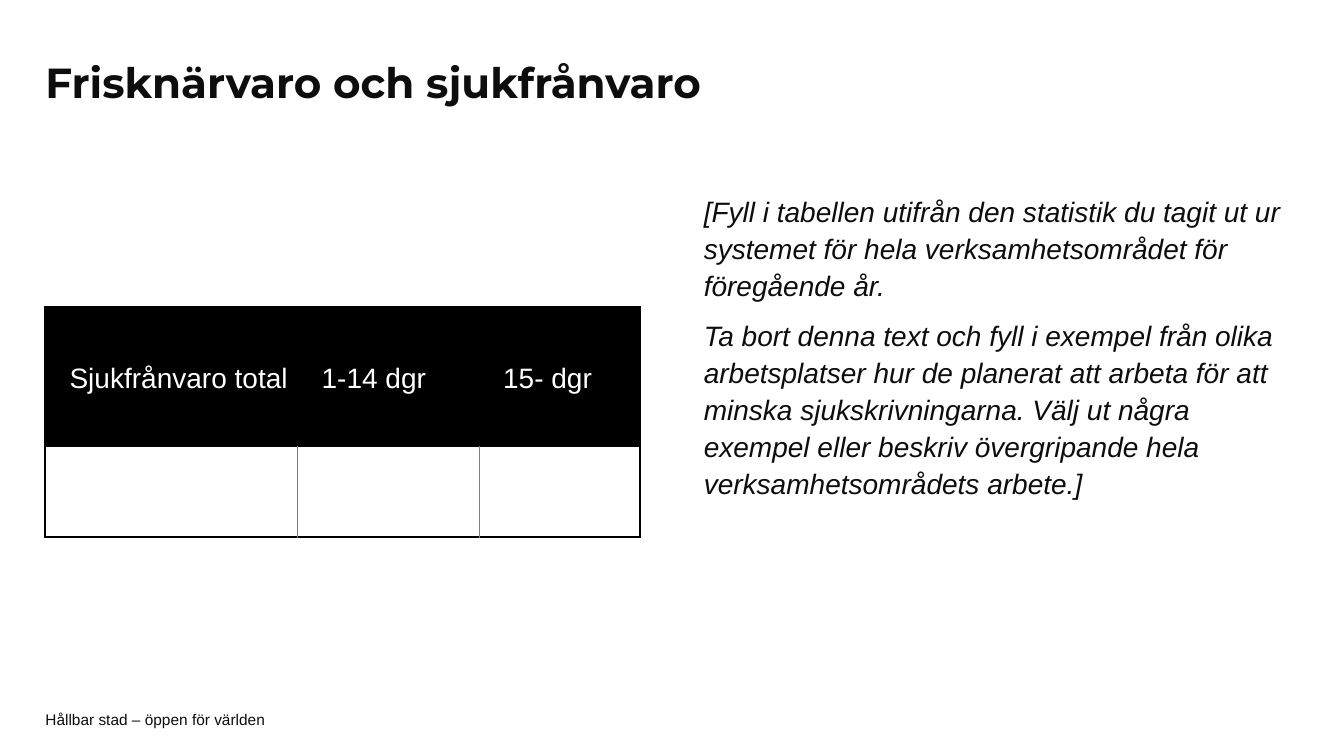
from pptx import Presentation
from pptx.dml.color import RGBColor
from pptx.enum.text import MSO_ANCHOR
from pptx.oxml.ns import qn
from pptx.util import Inches, Pt
from lxml import etree

MIDDLE, TOP = MSO_ANCHOR.MIDDLE, MSO_ANCHOR.TOP

# Content
COLORS = {"ink": "0D0D0D", "black": "000000", "white": "FFFFFF", "grid": "808080"}
TITLE = "Frisknärvaro och sjukfrånvaro"
FOOTER = "Hållbar stad – öppen för världen"
BODY = [
    "[Fyll i tabellen utifrån den statistik du tagit ut ur systemet för hela "
    "verksamhetsområdet för föregående år.",
    "Ta bort denna text och fyll i exempel från olika arbetsplatser hur de "
    "planerat att arbeta för att minska sjukskrivningarna. Välj ut några exempel "
    "eller beskriv övergripande hela verksamhetsområdets arbete.]",
]
ROWS = [["Sjukfrånvaro total", "1-14 dgr", "15- dgr"], ["", "", ""]]
WIDTHS = [2.5, 1.8, 1.6]
HEIGHTS = [1.39, 0.9]
LEFT = 0.45


def color(name):
    return RGBColor.from_string(COLORS[name])


def style(para, size, face="Arial", tint="ink", bold=False, italic=False):
    font = para.font
    font.size, font.name, font.bold, font.italic = Pt(size), face, bold, italic
    font.color.rgb = color(tint)


def add_text(slide, box, lines, anchor, pad=0, **look):
    frame = slide.shapes.add_textbox(*map(Inches, box)).text_frame
    frame.word_wrap = True
    frame.vertical_anchor = anchor
    frame.margin_left = frame.margin_right = 0
    frame.margin_top = frame.margin_bottom = Inches(pad)
    frame.text = "\n".join(lines)
    for para in frame.paragraphs:
        style(para, **look)
    return frame.paragraphs


def add_edge(cell, side, tint, width):
    props = cell._tc.get_or_add_tcPr()
    line = etree.SubElement(props, qn("a:ln" + side), w=str(Pt(width)))
    fill = etree.SubElement(line, qn("a:solidFill"))
    etree.SubElement(fill, qn("a:srgbClr"), val=COLORS[tint])


def add_grid(slide):
    size = (len(ROWS), len(WIDTHS))
    box = (LEFT, 3.04, sum(WIDTHS), sum(HEIGHTS))
    table = slide.shapes.add_table(*size, *map(Inches, box)).table
    for col, width in zip(table.columns, WIDTHS):
        col.width = Inches(width)
    for row, height in zip(table.rows, HEIGHTS):
        row.height = Inches(height)
    last = len(WIDTHS) - 1
    for r, texts in enumerate(ROWS):
        head = r == 0
        for c, text in enumerate(texts):
            cell = table.cell(r, c)
            cell.text = text
            cell.vertical_anchor = MIDDLE
            cell.margin_left, cell.margin_right = Inches(0.24), Inches(0.04)
            cell.margin_top = cell.margin_bottom = Inches(0.18)
            para = cell.text_frame.paragraphs[0]
            para.line_spacing, para.space_after = 1.15, Pt(8)
            style(para, 20, tint="white" if head else "ink")
            # Heavy outer frame, thin lines between the columns
            for side, outer in (("L", c == 0), ("R", c == last)):
                if head or outer:
                    add_edge(cell, side, "black", 1.5)
                else:
                    add_edge(cell, side, "grid", 0.5)
            for side in "TB":
                add_edge(cell, side, "black", 1.5)
            cell.fill.solid()
            cell.fill.fore_color.rgb = color("black" if head else "white")


def main():
    deck = Presentation()
    deck.slide_width, deck.slide_height = Inches(13.33), Inches(7.5)
    slide = deck.slides.add_slide(deck.slide_layouts[6])

    # Footer and title
    add_text(slide, (LEFT, 7.06, 9.45, 0.16), [FOOTER], MIDDLE, size=11)
    title = add_text(slide, (LEFT, 0.44, 10.03, 0.81), [TITLE], MIDDLE, pad=0.05,
                     size=30, face="Montserrat", bold=True)
    title[0].line_spacing = 0.9

    # Instructions
    body = add_text(slide, (6.98, 1.9, 5.91, 4.57), BODY, TOP, size=20, italic=True)
    for i, para in enumerate(body):
        para.line_spacing, para.space_after = 1.1, Pt(3)
        para.space_before = Pt(6 if i else 0)

    # Sick leave table
    add_grid(slide)
    deck.save("out.pptx")


if __name__ == "__main__":
    main()
